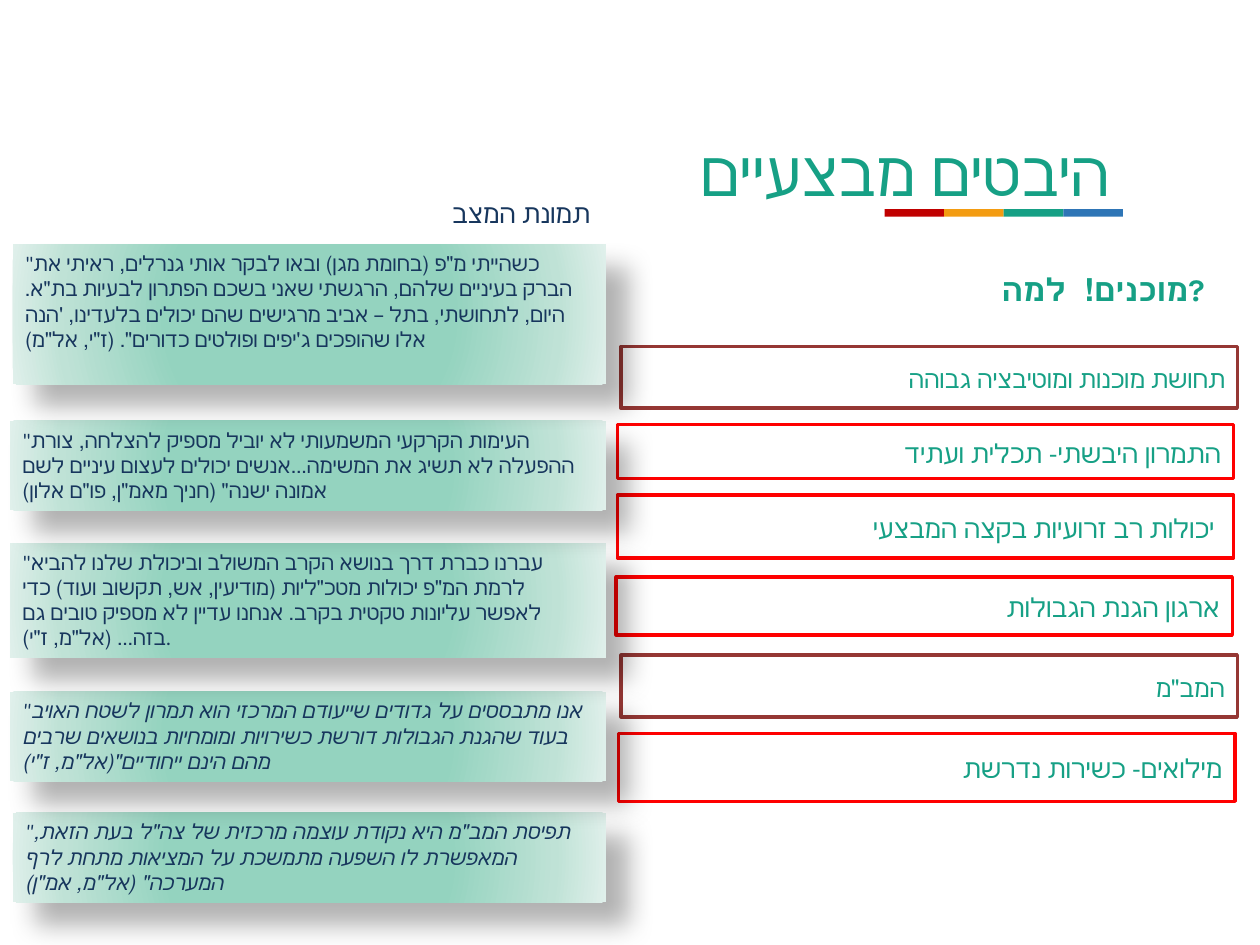
import pptx
import pptx.util
import pptx.dml.color
import pptx.enum.shapes
import pptx.enum.text
import pptx.oxml

Inches, Pt = pptx.util.Inches, pptx.util.Pt
RECT = pptx.enum.shapes.MSO_SHAPE.RECTANGLE
ANCHOR, ALIGN = pptx.enum.text.MSO_ANCHOR, pptx.enum.text.PP_ALIGN
NS = 'xmlns:a="http://schemas.openxmlformats.org/drawingml/2006/main"'
COLORS = {"green": "16A085", "navy": "17365D", "red": "FF0000", "brown": "953734",
          "crimson": "C00000", "orange": "F39C12", "blue": "2E75B6",
          "mint": "94D3BF", "pale": "BFE2D6", "mist": "E0F0EB"}


def rgb(name):
    return pptx.dml.color.RGBColor.from_string(COLORS[name])


def write(shape, text, color, frame_format, paragraph_format, font_format):
    frame = shape.text_frame
    frame.text = text
    paragraph = frame.paragraphs[0]
    for target, values in ((frame, frame_format), (paragraph, paragraph_format),
                           (paragraph.runs[0].font, font_format)):
        for key, value in values.items():
            setattr(target, key, value)
    paragraph.runs[0].font.color.rgb = rgb(color)


deck = pptx.Presentation()
deck.slide_width, deck.slide_height = Inches(10), Inches(7.5)
slide = deck.slides.add_slide(deck.slide_layouts[5])
shapes = slide.shapes

# Title
heading = shapes.title
heading.left, heading.top, heading.width, heading.height = map(Inches, (5.23, 1.01, 3.91, 0.71))
write(heading, "היבטים מבצעיים", "green",
      {"word_wrap": False, "vertical_anchor": ANCHOR.TOP,
       "auto_size": pptx.enum.text.MSO_AUTO_SIZE.NONE},
      {"alignment": ALIGN.CENTER}, {"size": Pt(36), "name": "Calibri"})

# Four-colour rule under the title
STRIPE = 0.473
for i, color in enumerate(("crimson", "orange", "green", "blue")):
    stripe = shapes.add_shape(RECT, Inches(7.02 + i * STRIPE), Inches(1.66),
                              Inches(STRIPE), Inches(0.06))
    stripe.shadow.inherit = False
    stripe.fill.solid()
    stripe.fill.fore_color.rgb = rgb(color)
    stripe.line.fill.background()

# Column headings
situation = shapes.add_textbox(*map(Inches, (3.49, 1.52, 3.55, 0.35)))
write(situation, "תמונת המצב", "navy", {"word_wrap": True}, {},
      {"size": Pt(15), "name": "Calibri"})
readiness = shapes.add_textbox(*map(Inches, (7.85, 1.94, 1.95, 0.56)))
write(readiness, "מוכנים!  למה? ", "green", {"word_wrap": True},
      {"alignment": ALIGN.JUSTIFY, "line_spacing": 1.5},
      {"size": Pt(18), "name": "Karla", "bold": True})

# Topics in the right column: left, top, height, outline, text
TOPICS = [
    (4.93, 2.75, 0.49, "brown", "תחושת מוכנות ומוטיבציה גבוהה"),
    (4.9, 3.37, 0.43, "red", "התמרון היבשתי- תכלית ועתיד"),
    (4.9, 3.93, 0.5, "red", "יכולות רב זרועיות בקצה המבצעי "),
    (4.89, 4.58, 0.46, "red", "ארגון הגנת הגבולות"),
    (4.93, 5.2, 0.49, "brown", "המב\"מ"),
    (4.91, 5.82, 0.54, "red", "מילואים- כשירות נדרשת"),
]
TOPIC_FONTS = {"red": {"size": Pt(15), "name": "Calibri"},
               "brown": {"size": Pt(14.2), "name": "Karla"}}
for left, top, height, outline, text in TOPICS:
    topic = shapes.add_shape(RECT, *map(Inches, (left, top, 4.89, height)))
    topic.shadow.inherit = False
    topic.fill.background()
    topic.line.color.rgb = rgb(outline)
    topic.line.width = Pt(2)
    write(topic, text, "green", {"word_wrap": True, "vertical_anchor": ANCHOR.MIDDLE},
          {"alignment": ALIGN.RIGHT, "line_spacing": 1.07, "space_after": Pt(6)},
          TOPIC_FONTS[outline])

# Quotes in the left column: left, top, height, italic, text
QUOTE_RIGHT = 4.81
QUOTES = [
    (0.1, 6.45, 0.71, True,
     "\"תפיסת המב\"מ היא נקודת עוצמה מרכזית של צה\"ל בעת הזאת, המאפשרת לו השפעה "
     "מתמשכת על המציאות מתחת לרף המערכה\" (אל\"מ, אמ\"ן)"),
    (0.08, 5.49, 0.71, True,
     "\"אנו מתבססים על גדודים שייעודם המרכזי הוא תמרון לשטח האויב בעוד שהגנת הגבולות "
     "דורשת כשירויות ומומחיות בנושאים שרבים מהם הינם ייחודיים\"(אל\"מ, ז\"י)"),
    (0.08, 4.31, 0.91, False,
     "\"עברנו כברת דרך בנושא הקרב המשולב וביכולת שלנו להביא לרמת המ\"פ יכולות "
     "מטכ\"ליות (מודיעין, אש, תקשוב ועוד) כדי לאפשר עליונות טקטית בקרב. אנחנו עדיין "
     "לא מספיק טובים גם בזה... (אל\"מ, ז\"י)."),
    (0.08, 3.34, 0.71, False,
     "\"העימות הקרקעי המשמעותי לא יוביל מספיק להצלחה, צורת ההפעלה לא תשיג את "
     "המשימה...אנשים יכולים לעצום עיניים לשם אמונה ישנה\" (חניך מאמ\"ן, פו\"ם אלון)"),
    (0.1, 1.94, 1.11, False,
     "\"כשהייתי מ\"פ (בחומת מגן) ובאו לבקר אותי גנרלים, ראיתי את הברק בעיניים שלהם, "
     "הרגשתי שאני בשכם הפתרון לבעיות בת\"א. היום, לתחושתי, בתל – אביב מרגישים שהם "
     "יכולים בלעדינו, 'הנה אלו שהופכים ג'יפים ופולטים כדורים\". (ז\"י, אל\"מ)"),
]
stops = "".join(f'<a:gs pos="{share * 1000}"><a:srgbClr val="{COLORS[color]}"/></a:gs>'
                for share, color in ((47, "mint"), (82, "pale"), (100, "mist")))
GLOW = (f'<a:gradFill {NS} rotWithShape="1"><a:gsLst>{stops}</a:gsLst><a:path path="circle">'
        '<a:fillToRect l="50000" t="50000" r="50000" b="50000"/></a:path></a:gradFill>')
SHADOW = (f'<a:effectLst {NS}><a:outerShdw blurRad="{Pt(15)}" dist="{Pt(18)}" dir="2700000" '
          'algn="tl" rotWithShape="0"><a:srgbClr val="000000"><a:alpha val="30000"/>'
          '</a:srgbClr></a:outerShdw></a:effectLst>')
for left, top, height, italic, text in QUOTES:
    quote = shapes.add_shape(RECT, *map(Inches, (left, top, QUOTE_RIGHT - left, height)))
    quote.line.fill.background()
    properties = quote.element.spPr
    properties.find(pptx.oxml.ns.qn("a:prstGeom")).addnext(pptx.oxml.parse_xml(GLOW))
    properties.append(pptx.oxml.parse_xml(SHADOW))
    write(quote, text, "navy", {"word_wrap": True, "vertical_anchor": ANCHOR.TOP},
          {"alignment": ALIGN.LEFT}, {"size": Pt(12), "name": "Calibri", "italic": italic})

deck.save("out.pptx")
